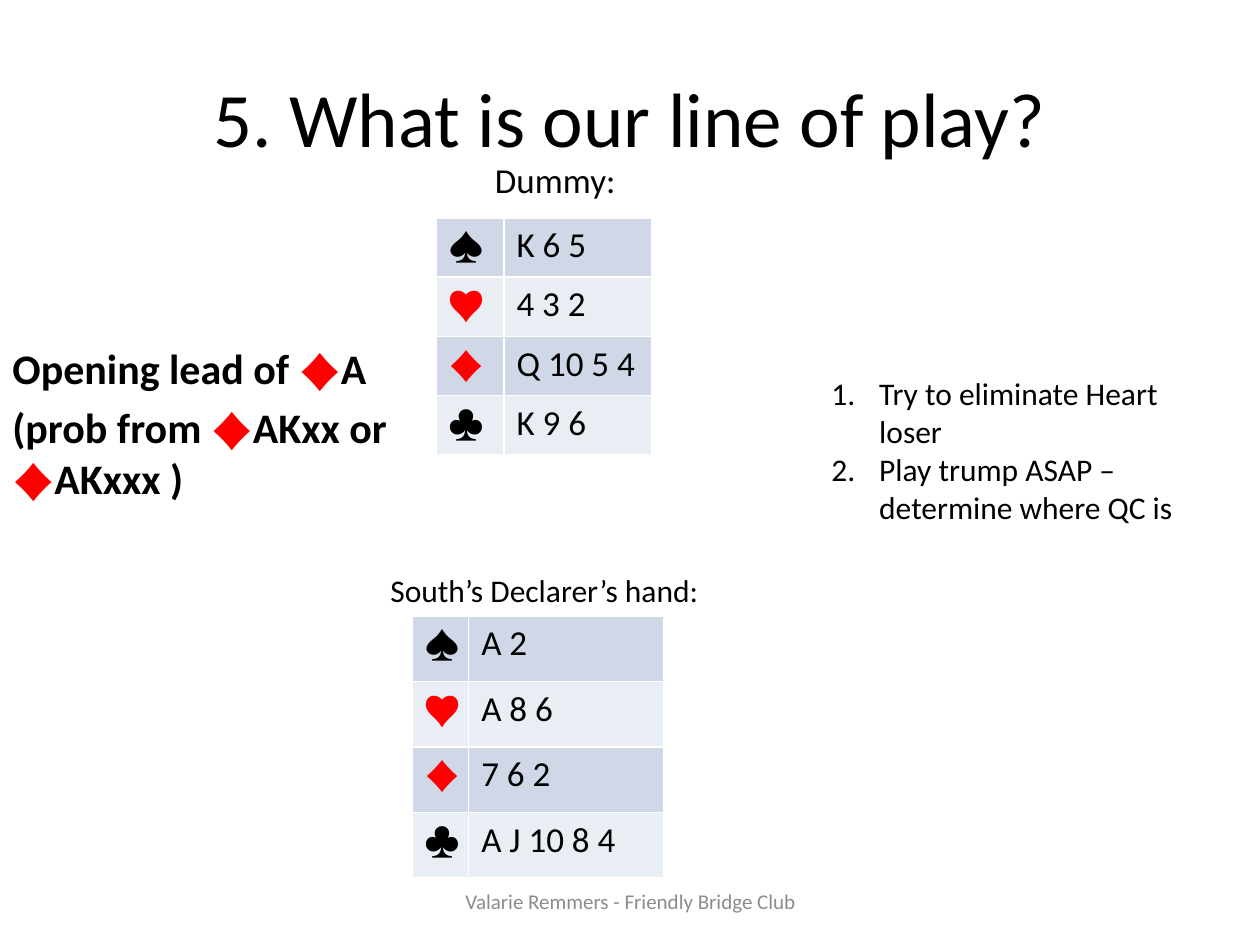
from itertools import groupby

from lxml import etree
from pptx import Presentation
from pptx.dml.color import RGBColor
from pptx.enum import text as tx
from pptx.util import Pt

PX = 9144  # 100 px to the inch
FONT = "Calibri"
BLACK = RGBColor(0, 0, 0)
RED = RGBColor(0xFF, 0, 0)
GREY = RGBColor(0x8C, 0x8C, 0x8C)
BANDS = [RGBColor(0xD0, 0xD8, 0xE8), RGBColor(0xE9, 0xED, 0xF4)]

MID, LOW, TOP = tx.MSO_ANCHOR.MIDDLE, tx.MSO_ANCHOR.BOTTOM, tx.MSO_ANCHOR.TOP
LEFT, CENTER = tx.PP_ALIGN.LEFT, tx.PP_ALIGN.CENTER

TITLE = "5. What is our line of play?"
SUITS = ["♠", "♥", "♦", "♣"]
DUMMY = ["K 6 5", "4 3 2", "Q 10 5 4", "K 9 6"]
SOUTH = ["A 2", "A 8 6", "7 6 2", "A J 10 8 4"]

# place, row height, column widths, rows
TABLES = [
    ((327, 489), 52, [45, 155], list(zip(SUITS, SOUTH))),
    ((346, 173), 47, [54], [[s] for s in SUITS]),
    ((400, 173), 47, [117], [[c] for c in DUMMY]),
]

LEAD = ["Opening lead of ♦A", "(prob from ♦AKxx or ♦AKxxx )"]
PLAN = ["Try to eliminate Heart loser",
        "Play trump ASAP – determine where QC is"]

# box, lines, style
NOTES = [
    ((0, 340, 325, 149), LEAD,
     dict(size=24, bold=True, anchor=LOW, foot=90, gap=5)),
    ((383, 118, 117, 46), ["Dummy:"], dict(size=20, anchor=LOW)),
    ((342, 695, 317, 40), ["Valarie Remmers - Friendly Bridge Club"],
     dict(size=12, color=GREY, anchor=MID, align=CENTER)),
    ((300, 448, 342, 40), ["South’s Declarer’s hand:"], dict(size=18)),
    ((650, 292, 300, 162), PLAN, dict(size=18, number=True)),
]


def px(*values):
    return [v * PX for v in values]


def write(para, line, size, color=BLACK, bold=False):
    """Add a line as runs, with the red suits in red."""
    for red, chars in groupby(line, lambda c: c in "♥♦"):
        run = para.add_run()
        run.text = "".join(chars)
        form = dict(name=FONT, size=Pt(size), bold=bold)
        for key, value in form.items():
            setattr(run.font, key, value)
        run.font.color.rgb = RED if red else color


def number(para):
    """Number a paragraph with a hanging indent."""
    props = para._p.get_or_add_pPr()
    props.set("marL", str(38 * PX))
    props.set("indent", str(-38 * PX))
    mark = etree.SubElement(
        props, "{http://schemas.openxmlformats.org/drawingml/2006/main}buAutoNum")
    mark.set("type", "arabicPeriod")


def fill(frame, lines, style):
    form = dict(word_wrap=True, vertical_anchor=style.get("anchor", TOP),
                margin_bottom=style.get("foot", 5) * PX)
    for key, value in form.items():
        setattr(frame, key, value)
    for i, line in enumerate(lines):
        para = frame.add_paragraph() if i else frame.paragraphs[0]
        para.alignment = style.get("align", LEFT)
        para.space_before = Pt(style.get("gap", 0))
        if style.get("number"):
            number(para)
        write(para, line, style["size"], style.get("color", BLACK),
              style.get("bold", False))


def draw_table(slide, place, high, widths, rows):
    box = px(*place, sum(widths), high * len(rows))
    table = slide.shapes.add_table(len(rows), len(widths), *box).table
    table.first_row = table.horz_banding = False
    for col, wide in zip(table.columns, widths):
        col.width = wide * PX
    for r, row in enumerate(rows):
        table.rows[r].height = high * PX
        for c, words in enumerate(row):
            cell = table.cell(r, c)
            cell.fill.solid()
            cell.fill.fore_color.rgb = BANDS[r % 2]
            write(cell.text_frame.paragraphs[0], words, 20)


def main():
    deck = Presentation()
    deck.slide_width, deck.slide_height = px(1000, 750)
    slide = deck.slides.add_slide(deck.slide_layouts[5])
    title = slide.shapes.title
    title.left, title.top, title.width, title.height = px(50, 30, 900, 125)
    fill(title.text_frame, [TITLE], dict(size=44, anchor=MID, align=CENTER))
    for spec in TABLES:
        draw_table(slide, *spec)
    for box, lines, style in NOTES:
        fill(slide.shapes.add_textbox(*px(*box)).text_frame, lines, style)
    deck.save("out.pptx")


if __name__ == "__main__":
    main()
